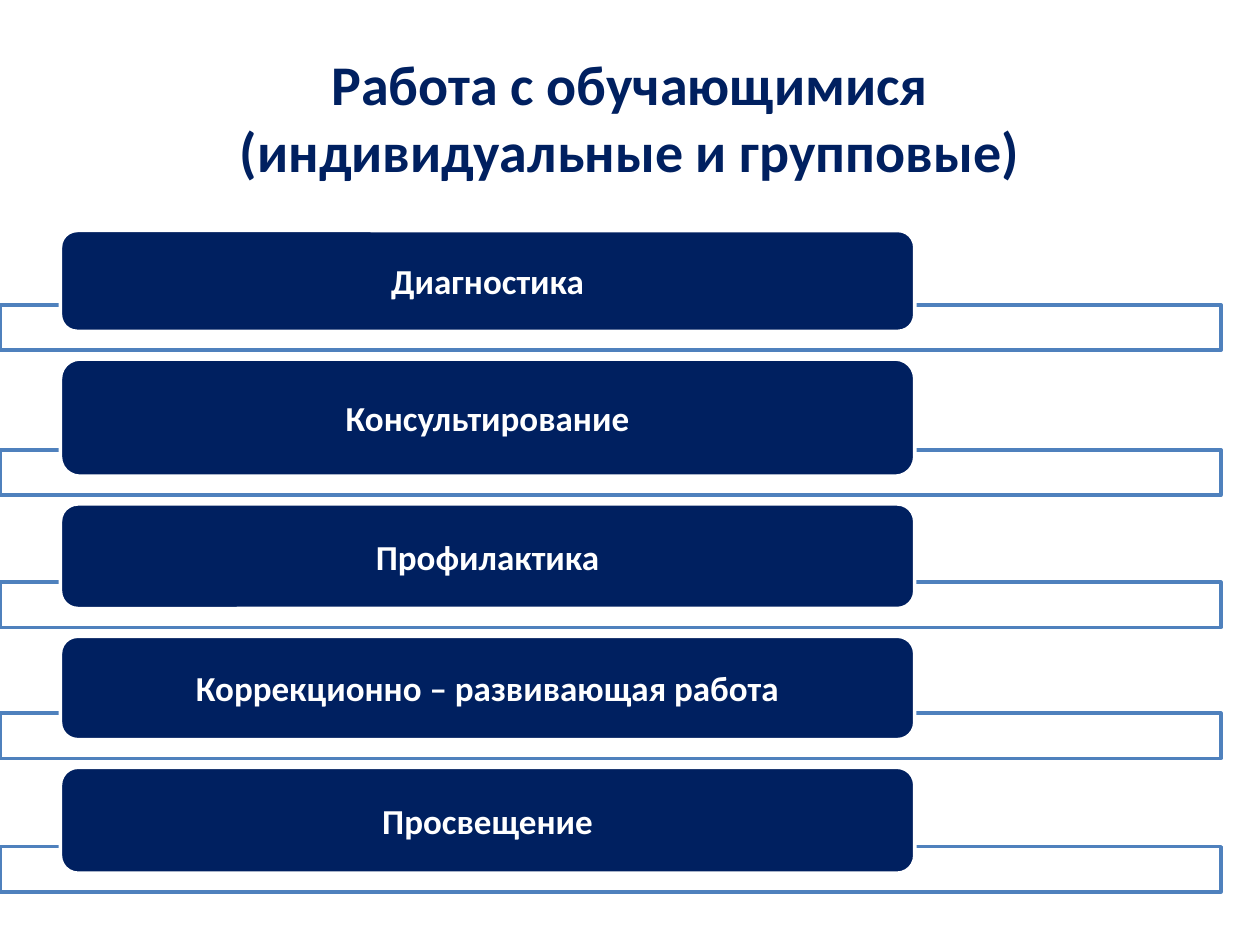
from pptx import Presentation
from pptx.dml.color import RGBColor
from pptx.enum.shapes import MSO_SHAPE
from pptx.enum.text import MSO_ANCHOR, PP_ALIGN
from pptx.util import Inches, Pt

NAVY = RGBColor(0x00, 0x20, 0x60)
BLUE = RGBColor(0x4F, 0x81, 0xBD)
WHITE = RGBColor(0xFF, 0xFF, 0xFF)
RECTANGLE, ROUNDED = MSO_SHAPE.RECTANGLE, MSO_SHAPE.ROUNDED_RECTANGLE
CENTER, MIDDLE = PP_ALIGN.CENTER, MSO_ANCHOR.MIDDLE

# Lengths in inches
BAR_WIDTH, BAR_HEIGHT = 9.69, 0.36
LABEL_LEFT, LABEL_WIDTH = 0.48, 6.78
FIRST_TOP, GAP, OVERLAP = 1.83, 0.22, 0.21

# Kinds of work and the heights of their labels
KINDS = [
    ("Диагностика", 0.80),
    ("Консультирование", 0.93),
    ("Профилактика", 0.83),
    ("Коррекционно – развивающая работа", 0.82),
    ("Просвещение", 0.84),
]


def add_box(shape_type, left, top, width, height, fill, line):
    box = page.shapes.add_shape(
        shape_type, Inches(left), Inches(top), Inches(width), Inches(height))
    box.shadow.inherit = False
    box.fill.solid()
    box.fill.fore_color.rgb = fill
    box.line.color.rgb = line
    box.line.width = Pt(2)
    return box


def write(box, text, size, color):
    frame = box.text_frame
    frame.word_wrap = True
    frame.vertical_anchor = MIDDLE
    frame.text = text
    para = frame.paragraphs[0]
    para.alignment = CENTER
    para.font.name = "Calibri"
    para.font.size = Pt(size)
    para.font.bold = True
    para.font.color.rgb = color


deck = Presentation()
deck.slide_width, deck.slide_height = Inches(10), Inches(7.5)
page = deck.slides.add_slide(deck.slide_layouts[5])

title = page.shapes.title
title.left, title.top = Inches(0.5), Inches(0.3)
title.width, title.height = Inches(9), Inches(1.25)
write(title, "Работа с обучающимися\v(индивидуальные и групповые)", 32, NAVY)

top = FIRST_TOP
for kind, height in KINDS:
    bottom = top + height
    add_box(RECTANGLE, 0, bottom - OVERLAP, BAR_WIDTH, BAR_HEIGHT, WHITE, BLUE)
    label = add_box(ROUNDED, LABEL_LEFT, top, LABEL_WIDTH, height, NAVY, WHITE)
    write(label, kind, 20, WHITE)
    top = bottom + GAP

deck.save("out.pptx")
